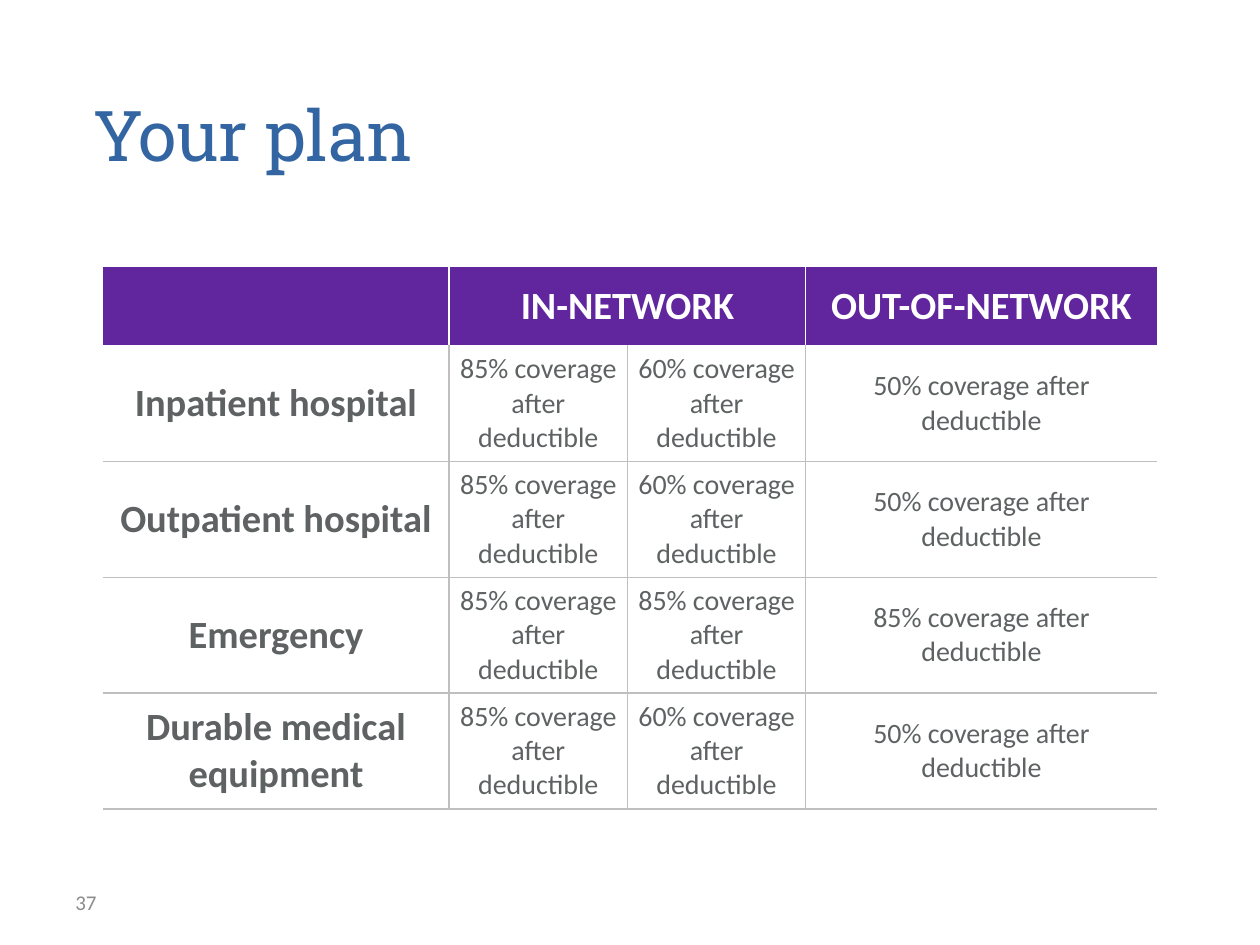
import pptx
import pptx.util
import pptx.dml.color
import pptx.enum.text
import pptx.oxml.ns
import lxml.etree

RGBColor = pptx.dml.color.RGBColor
WHITE = RGBColor(0xFF, 0xFF, 0xFF)
PURPLE = RGBColor(0x61, 0x25, 0x9E)
BLUE = RGBColor(0x33, 0x65, 0xA2)
DARK_GRAY = RGBColor(0x5E, 0x62, 0x63)
PAGE_GRAY = RGBColor(0x8C, 0x8C, 0x8C)
RULE_GRAY = RGBColor(0xBF, 0xBF, 0xBF)

ALIGN = pptx.enum.text.PP_ALIGN
ANCHOR = pptx.enum.text.MSO_ANCHOR
TITLE_ONLY = 5

HEADINGS = ["", "IN-NETWORK", "", "OUT-OF-NETWORK"]
COVERAGE = [
    ("Inpatient hospital", 85, 60, 50),
    ("Outpatient hospital", 85, 60, 50),
    ("Emergency", 85, 85, 85),
    ("Durable medical equipment", 85, 60, 50),
]
COLUMN_WIDTHS = [2.75, 1.415, 1.415, 2.79]
HEADER_HEIGHT = 0.62
BODY_HEIGHT = 0.92


class PlanSlide:
    def __init__(self, deck):
        self.deck = deck
        self.page = deck.slides.add_slide(deck.slide_layouts[TITLE_ONLY])
        self.title_font = "Roboto Slab"
        self.body_font = "Calibri"

    def place(self, left, top, width, height):
        across, down = self.deck.slide_width, self.deck.slide_height
        return [int(share * size) for share, size in
                zip((left, top, width, height), (across, down, across, down))]

    def set_text(self, holder, text, font, size, color, bold=False, align=ALIGN.LEFT):
        frame = holder.text_frame
        frame.text = text
        frame.word_wrap = True
        para = frame.paragraphs[0]
        para.alignment = align
        for span in para.runs:
            span.font.name = font
            span.font.size = pptx.util.Pt(size)
            span.font.bold = bold
            span.font.color.rgb = color

    def title(self, text, area):
        box = self.page.shapes.title
        box.left, box.top, box.width, box.height = self.place(*area)
        self.set_text(box, text, self.title_font, 40, BLUE)
        box.text_frame.vertical_anchor = ANCHOR.TOP
        box.text_frame.auto_size = pptx.enum.text.MSO_AUTO_SIZE.NONE

    def page_number(self, text, area):
        box = self.page.shapes.add_textbox(*self.place(*area))
        self.set_text(box, text, self.body_font, 12, PAGE_GRAY)
        box.text_frame.vertical_anchor = ANCHOR.MIDDLE

    def border(self, cell, side, color):
        properties = cell._tc.get_or_add_tcPr()
        line = lxml.etree.SubElement(
            properties, pptx.oxml.ns.qn("a:ln" + side), w=str(pptx.util.Pt(1)))
        if color is None:
            lxml.etree.SubElement(line, pptx.oxml.ns.qn("a:noFill"))
        else:
            fill = lxml.etree.SubElement(line, pptx.oxml.ns.qn("a:solidFill"))
            lxml.etree.SubElement(fill, pptx.oxml.ns.qn("a:srgbClr"), val=str(color))

    def cell(self, table, row, column, text):
        cell = table.cell(row, column)
        header = row == 0
        strong = header or column == 0
        rule = WHITE if header else RULE_GRAY
        last = len(table.columns) - 1
        self.border(cell, "L", rule if column > 0 else None)
        self.border(cell, "R", rule if column < last else None)
        self.border(cell, "T", None if header else WHITE if row == 1 else RULE_GRAY)
        self.border(cell, "B", rule)
        if header:
            cell.fill.solid()
            cell.fill.fore_color.rgb = PURPLE
        else:
            cell.fill.background()
        self.set_text(cell, text, self.body_font, 22 if strong else 16,
                      WHITE if header else DARK_GRAY, strong, ALIGN.CENTER)
        cell.vertical_anchor = ANCHOR.MIDDLE
        cell.margin_left = cell.margin_right = pptx.util.Inches(0.09 if strong else 0.06)
        cell.margin_top = cell.margin_bottom = pptx.util.Inches(0.05)

    def coverage_table(self, rows, area):
        table = self.page.shapes.add_table(
            len(rows), len(COLUMN_WIDTHS), *self.place(*area)).table
        for column, width in zip(table.columns, COLUMN_WIDTHS):
            column.width = pptx.util.Inches(width)
        for number, texts in enumerate(rows):
            height = BODY_HEIGHT if number else HEADER_HEIGHT
            table.rows[number].height = pptx.util.Inches(height)
            for column, text in enumerate(texts):
                self.cell(table, number, column, text)
        table.cell(0, 1).merge(table.cell(0, 2))


def main():
    deck = pptx.Presentation()
    deck.slide_width = pptx.util.Inches(10)
    deck.slide_height = pptx.util.Inches(7.5)
    slide = PlanSlide(deck)
    slide.page_number("37", (0.05, 0.93, 0.23, 0.05))
    slide.title("Your plan", (0.064, 0.09, 0.66, 0.125))
    body = [[service] + [f"{rate}% coverage after deductible" for rate in rates]
            for service, *rates in COVERAGE]
    slide.coverage_table([HEADINGS] + body, (0.0815, 0.283, 0.837, 0.57))
    deck.save("out.pptx")


if __name__ == "__main__":
    main()
